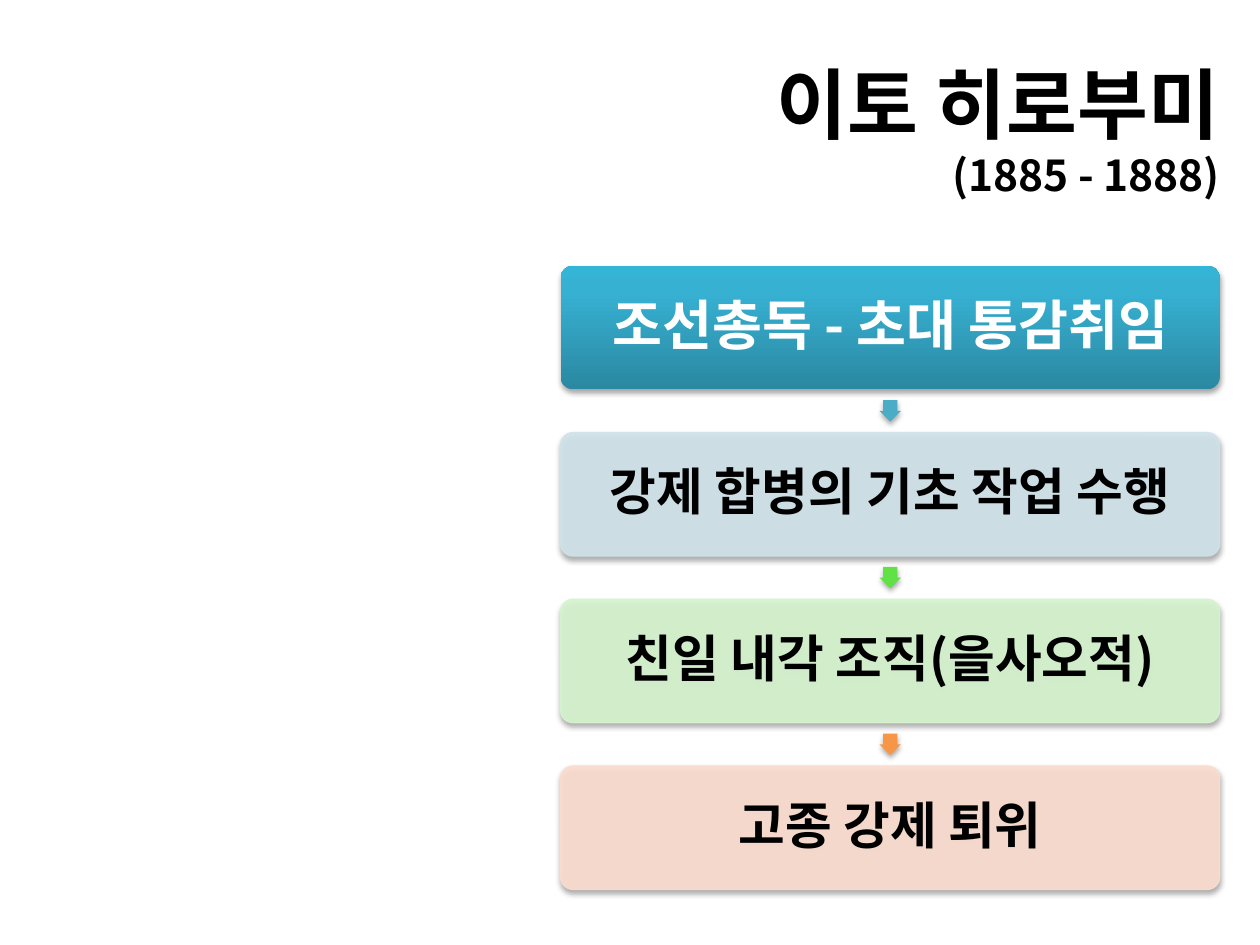
from lxml import etree
from pptx import Presentation
from pptx.dml.color import RGBColor
from pptx.enum.shapes import MSO_SHAPE as Kind
from pptx.enum.text import MSO_ANCHOR as Anchor, MSO_AUTO_SIZE as Auto, PP_ALIGN as Align
from pptx.oxml import parse_xml
from pptx.oxml.ns import nsdecls, qn
from pptx.util import Inches, Pt

FONT = "Noto Sans CJK KR"
BLACK = RGBColor(0, 0, 0)
WHITE = RGBColor(0xFF, 0xFF, 0xFF)
TEAL = RGBColor(0x34, 0xB4, 0xD6)
BLUE = RGBColor(0xD0, 0xE3, 0xEA)
GREEN = RGBColor(0xD6, 0xF4, 0xCE)
PEACH = RGBColor(0xFC, 0xDD, 0xCF)
AQUA = RGBColor(0x4B, 0xAC, 0xC6)
LIME = RGBColor(0x60, 0xE1, 0x46)
ORANGE = RGBColor(0xF7, 0x96, 0x46)

SHADOW = f"""<a:effectLst {nsdecls("a")}>
  <a:outerShdw blurRad="{Pt(3.1)}" dist="{Pt(1.8)}" dir="5400000" rotWithShape="0">
    <a:srgbClr val="000000"><a:alpha val="35000"/></a:srgbClr>
  </a:outerShdw></a:effectLst>"""
GRAD = f"""<a:gradFill {nsdecls("a")} rotWithShape="1"><a:gsLst>
  <a:gs pos="0"><a:srgbClr val="2A88A2"/></a:gs>
  <a:gs pos="80000"><a:srgbClr val="37B1D2"/></a:gs>
  <a:gs pos="100000"><a:srgbClr val="34B4D6"/></a:gs>
  </a:gsLst><a:lin ang="16200000" scaled="0"/></a:gradFill>"""


def style(run, size, color):
    for key, val in {"name": FONT, "size": Pt(size), "bold": True}.items():
        setattr(run.font, key, val)
    run.font.color.rgb = color
    latin = run.font._element.find(qn("a:latin"))
    latin.addnext(parse_xml(f'<a:ea {nsdecls("a")} typeface="{FONT}"/>'))


def add(kind, box, color):
    shape = slide.shapes.add_shape(kind, *[Inches(v) for v in box])
    shape.fill.solid()
    shape.fill.fore_color.rgb = color
    shape.line.fill.background()
    shape._element.spPr.append(parse_xml(SHADOW))
    return shape


prs = Presentation()
prs.slide_width, prs.slide_height = Inches(10), Inches(7.5)
slide = prs.slides.add_slide(prs.slide_layouts[5])

# Title: name and years
title = slide.shapes.title
place = {"left": 0.78, "top": 0.39, "width": 9, "height": 1.25}
for key, val in place.items():
    setattr(title, key, Inches(val))
frame = title.text_frame
frame.auto_size = Auto.NONE
frame.vertical_anchor = Anchor.MIDDLE
para = frame.paragraphs[0]
para.alignment = Align.RIGHT
run = para.add_run()
run.text = "이토 히로부미"
style(run, 44, BLACK)
para.add_line_break()
run = para.add_run()
run.text = "(1885 - 1888)"
style(run, 24.3, BLACK)

# Chain of steps, each followed by an arrow
LEFT, TOP, WIDE, HIGH, STEP, TIP = 4.45, 2.11, 5.23, 0.98, 1.323, 0.17
steps = [
    ("조선총독 - 초대 통감취임", 31, WHITE, TEAL, AQUA),
    ("강제 합병의 기초 작업 수행", 29, BLACK, BLUE, LIME),
    ("친일 내각 조직(을사오적)", 29, BLACK, GREEN, ORANGE),
    ("고종 강제 퇴위", 29, BLACK, PEACH, None),
]
for i, (text, size, ink, color, next_color) in enumerate(steps):
    top = TOP + i * STEP
    card = add(Kind.ROUNDED_RECTANGLE, (LEFT, top, WIDE, HIGH), color)
    card.adjustments[0] = 0.1
    solid = card._element.spPr.find(qn("a:solidFill"))
    if i == 0:
        solid.getparent().replace(solid, parse_xml(GRAD))
    else:
        card.line.color.rgb = color
        card.line.width = Pt(0.75)
        # Fill and outline are slightly see-through
        for tint in card._element.spPr.findall(".//" + qn("a:solidFill")):
            etree.SubElement(tint[0], qn("a:alpha"), val="90000")

    frame = card.text_frame
    frame.word_wrap = True
    frame.vertical_anchor = Anchor.MIDDLE
    for side in ("left", "top", "right", "bottom"):
        setattr(frame, f"margin_{side}", Inches(0.04))
    para = frame.paragraphs[0]
    form = {"alignment": Align.CENTER, "line_spacing": 0.9, "space_after": Pt(size * 0.35)}
    for key, val in form.items():
        setattr(para, key, val)
    run = para.add_run()
    run.text = text
    style(run, size, ink)

    if next_color:
        spot = (LEFT + (WIDE - TIP) / 2, top + HIGH + (STEP - HIGH - TIP) / 2, TIP, TIP)
        arrow = add(Kind.RIGHT_ARROW, spot, next_color)
        arrow.rotation = 90
        arrow.adjustments[0] = 0.67

prs.save("out.pptx")
